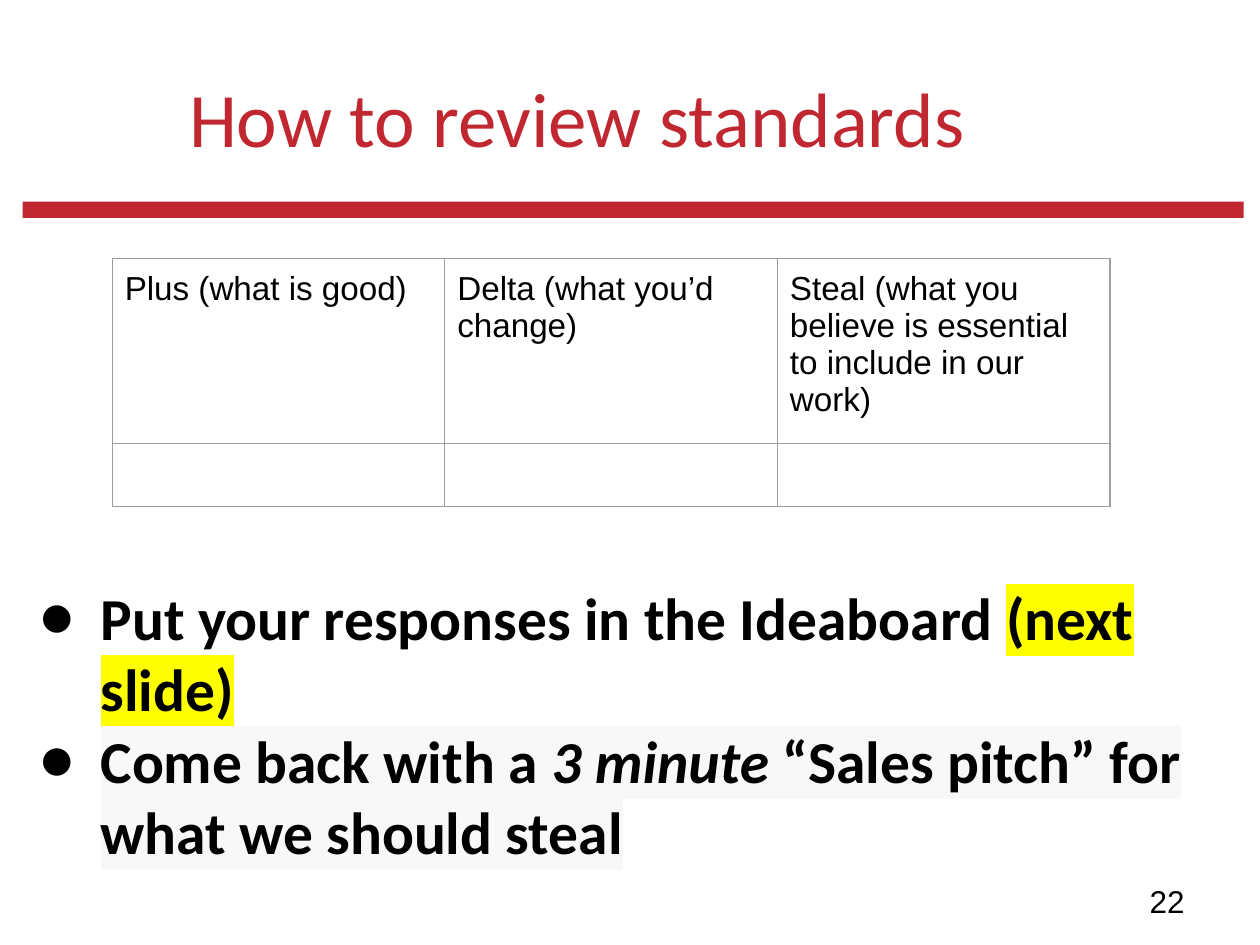
import pptx
import pptx.dml.color
import pptx.enum.shapes
import pptx.enum.text
import pptx.oxml
import pptx.oxml.ns
import pptx.util
from pptx.util import Inches

COLORS = {
    "red": "C12730",
    "black": "000000",
    "border": "9E9E9E",
    "yellow": "FFFF00",
    "pale": "F8F8F8",
}
ALIGN = pptx.enum.text.PP_ALIGN
ANCHOR = pptx.enum.text.MSO_ANCHOR
NAMESPACE = pptx.oxml.ns.nsdecls("a")


def rgb(color):
    return pptx.dml.color.RGBColor.from_string(COLORS[color])


def element(tag, attributes="", content=""):
    """Return a new element of the drawing namespace."""
    return pptx.oxml.parse_xml(f"<a:{tag} {NAMESPACE} {attributes}>{content}</a:{tag}>")


def color_xml(color):
    return f'<a:srgbClr val="{COLORS[color]}"/>'


class SlideBuilder:
    heading_font = "Calibri"
    table_font = "Arial"

    def __init__(self, presentation):
        self.slide = presentation.slides.add_slide(presentation.slide_layouts[5])

    def add_run(self, paragraph, text, font, size, color="black",
                bold=False, italic=False, highlight=None):
        run = paragraph.add_run()
        run.text = text
        run.font.size = pptx.util.Pt(size)
        run.font.bold = bold
        run.font.italic = italic
        run.font.color.rgb = rgb(color)
        if highlight:
            fill = run.font._element.find(pptx.oxml.ns.qn("a:solidFill"))
            fill.addnext(element("highlight", content=color_xml(highlight)))
        run.font.name = font

    def set_insets(self, frame, horizontal, vertical):
        frame.margin_left = frame.margin_right = Inches(horizontal)
        frame.margin_top = frame.margin_bottom = Inches(vertical)

    def title(self, text, left, top, width, height):
        shape = self.slide.shapes.title
        shape.left, shape.top = Inches(left), Inches(top)
        shape.width, shape.height = Inches(width), Inches(height)
        frame = shape.text_frame
        frame.vertical_anchor = ANCHOR.MIDDLE
        self.set_insets(frame, 0.1, 0.05)
        paragraph = frame.paragraphs[0]
        paragraph.alignment = ALIGN.LEFT
        self.add_run(paragraph, text, self.heading_font, 44, "red")

    def bar(self, left, top, width, height):
        shape = self.slide.shapes.add_shape(
            pptx.enum.shapes.MSO_SHAPE.RECTANGLE,
            Inches(left), Inches(top), Inches(width), Inches(height))
        shape.shadow.inherit = False
        shape.fill.solid()
        shape.fill.fore_color.rgb = rgb("red")
        shape.line.fill.background()

    def text_box(self, left, top, width, height, vertical_inset):
        box = self.slide.shapes.add_textbox(
            Inches(left), Inches(top), Inches(width), Inches(height))
        frame = box.text_frame
        frame.word_wrap = True
        self.set_insets(frame, 0.1, vertical_inset)
        return frame

    def page_number(self, text, left, top, width, height):
        paragraph = self.text_box(left, top, width, height, 0.05).paragraphs[0]
        paragraph.alignment = ALIGN.RIGHT
        self.add_run(paragraph, text, self.table_font, 18)

    def bullets(self, items, left, top, width, height):
        """Each item is a list of (text, run style) pairs."""
        frame = self.text_box(left, top, width, height, 0.1)
        frame.auto_size = pptx.enum.text.MSO_AUTO_SIZE.SHAPE_TO_FIT_TEXT
        for index, item in enumerate(items):
            paragraph = frame.add_paragraph() if index else frame.paragraphs[0]
            properties = paragraph._p.get_or_add_pPr()
            properties.set("marL", str(Inches(0.5)))
            properties.set("indent", str(Inches(-0.49)))
            properties.append(element("buClr", content=color_xml("black")))
            properties.append(element("buFont", f'typeface="{self.heading_font}"'))
            properties.append(element("buChar", 'char="●"'))
            for text, style in item:
                self.add_run(paragraph, text, self.heading_font, 34, bold=True, **style)

    def table(self, rows, left, top, column_width, row_height):
        columns = len(rows[0])
        table = self.slide.shapes.add_table(
            len(rows), columns, Inches(left), Inches(top),
            Inches(column_width * columns), Inches(row_height * len(rows))).table
        table.first_row = table.horz_banding = False
        for column in table.columns:
            column.width = Inches(column_width)
        for row_index, texts in enumerate(rows):
            for column_index, text in enumerate(texts):
                self.fill_cell(table.cell(row_index, column_index), text)

    def fill_cell(self, cell, text):
        self.set_insets(cell, 0.1, 0.1)
        cell.vertical_anchor = ANCHOR.TOP
        paragraph = cell.text_frame.paragraphs[0]
        if text:
            self.add_run(paragraph, text, self.table_font, 19)
        else:
            paragraph._p.append(element(
                "endParaRPr", 'sz="1800"', f'<a:latin typeface="{self.table_font}"/>'))
        cell.fill.background()
        properties = cell._tc.get_or_add_tcPr()
        line_fill = f'<a:solidFill>{color_xml("border")}</a:solidFill>'
        for position, side in enumerate(("lnL", "lnR", "lnT", "lnB")):
            border = element(side, f'w="{pptx.util.Pt(0.75)}"', line_fill)
            properties.insert(position, border)


def main():
    presentation = pptx.Presentation()
    presentation.slide_width = Inches(10)
    presentation.slide_height = Inches(7.5)

    builder = SlideBuilder(presentation)
    builder.bar(0.18, 1.6, 9.69, 0.13)
    builder.page_number("22", 7.17, 6.95, 2.33, 0.4)
    builder.title("How to review standards", 1.4, 0.3, 8.44, 1.25)
    review_rows = [
        ["Plus (what is good)",
         "Delta (what you’d change)",
         "Steal (what you believe is essential to include in our work)"],
        ["", "", ""],
    ]
    builder.table(review_rows, 0.89, 2.05, 2.64, 0.42)
    pale = {"highlight": "pale"}
    instructions = [
        [("Put your responses in the Ideaboard ", {}),
         ("(next slide)", {"highlight": "yellow"})],
        [("Come back with a ", pale),
         ("3 minute", {"italic": True, **pale}),
         (" “Sales pitch” for what we should steal", pale)],
    ]
    builder.bullets(instructions, 0.2, 4.51, 9.3, 2.49)
    presentation.save("out.pptx")


if __name__ == "__main__":
    main()
